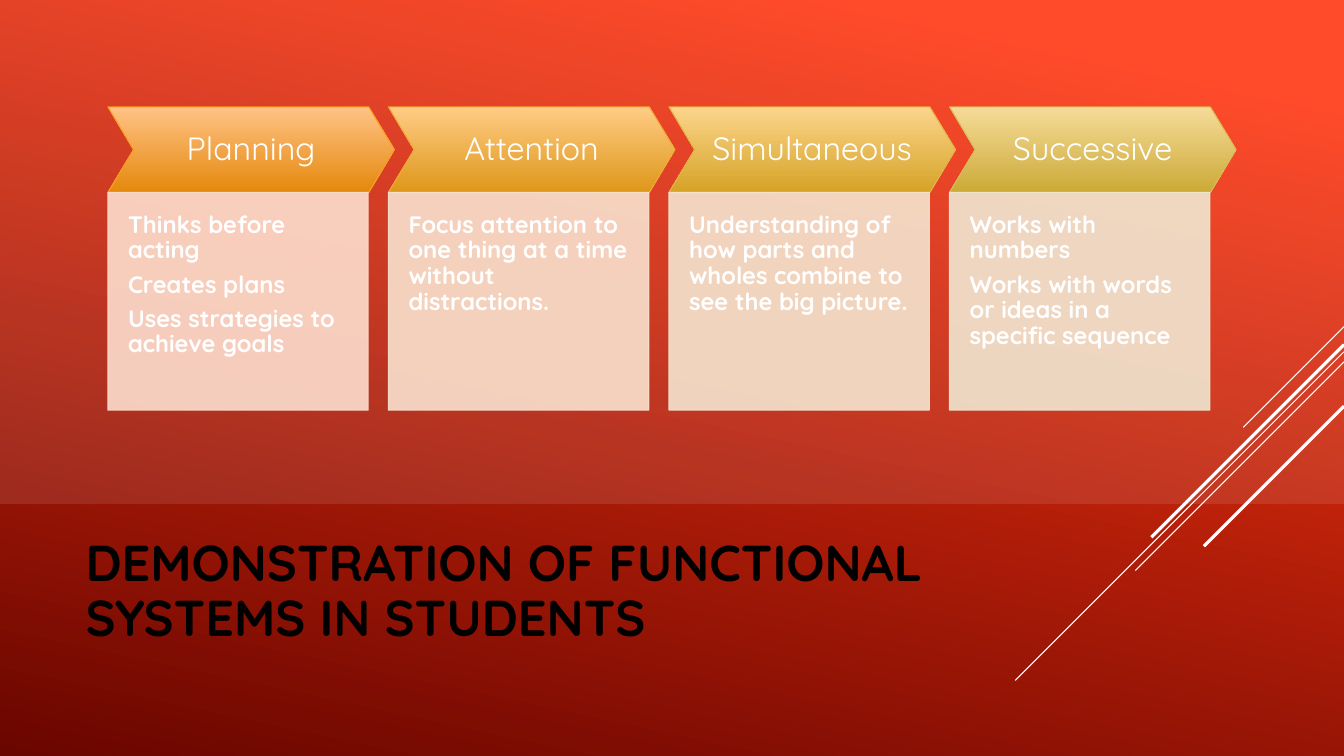
"""Build the slide on functional systems in students."""
from pptx import Presentation
from pptx.dml.color import RGBColor as RGB
from pptx.enum.shapes import MSO_CONNECTOR as CONN, MSO_SHAPE as SHAPE
from pptx.enum.text import MSO_ANCHOR as ANCHOR, PP_ALIGN as ALIGN
from pptx.oxml.ns import qn
from pptx.util import Inches, Pt
from lxml.etree import SubElement

SLIDE_W, SLIDE_H = 13.33, 7.5
FONT = "Quicksand"
WHITE, BLACK = RGB(255, 255, 255), RGB(0, 0, 0)
BG_TOP, BG_BOTTOM = RGB(0xFF, 0x37, 0x12), RGB(0x6A, 0x06, 0x00)

SYSTEMS = [
    ("Planning",
     ["Thinks before acting", "Creates plans", "Uses strategies to achieve goals"],
     RGB(0xFF, 0xC3, 0x86), RGB(0xE5, 0x88, 0x0C),
     RGB(0xFA, 0x9C, 0x1F), RGB(0xFD, 0xDE, 0xCD)),
    ("Attention",
     ["Focus attention to one thing at a time without distractions."],
     RGB(0xFF, 0xCC, 0x85), RGB(0xDE, 0x97, 0x19),
     RGB(0xEE, 0xAA, 0x32), RGB(0xF9, 0xE2, 0xCE)),
    ("Simultaneous",
     ["Understanding of how parts and wholes combine to see the big picture."],
     RGB(0xFC, 0xD5, 0x8C), RGB(0xD6, 0xA3, 0x26),
     RGB(0xE3, 0xB4, 0x44), RGB(0xF5, 0xE5, 0xCF)),
    ("Successive",
     ["Works with numbers", "Works with words or ideas in a specific sequence"],
     RGB(0xF5, 0xDB, 0x99), RGB(0xCC, 0xAA, 0x37),
     RGB(0xD9, 0xBB, 0x55), RGB(0xF1, 0xE7, 0xD1)),
]
RAYS = [(3.24, 1.0, 0.75), (3.49, 3.26, 0.75), (3.59, 2.07, 0.75),
        (3.42, 1.91, 2.25), (4.03, 1.39, 2.25)]


def set_attrs(obj, **values):
    """Set each given value as an attribute of obj."""
    for name, value in values.items():
        setattr(obj, name, value)


def set_gradient(fill, stops, angle):
    """Fill with two (position, colour) stops at a clockwise angle."""
    fill.gradient()
    fill.gradient_angle = 360 - angle
    for stop, (position, color) in zip(fill.gradient_stops, stops):
        stop.position = position
        stop.color.rgb = color


def set_solid(sp, fill, color, opacity):
    """Give a fill of sp a colour with an opacity in percent."""
    fill.solid()
    fill.fore_color.rgb = color
    clr = list(sp._element.spPr.iter(qn("a:srgbClr")))[-1]
    SubElement(clr, qn("a:alpha")).set("val", str(opacity * 1000))


def add_shape(slide, kind, box, adjustments=()):
    """Add a preset shape without shadow."""
    sp = slide.shapes.add_shape(kind, *map(Inches, box))
    sp.shadow.inherit = False
    for i, value in enumerate(adjustments):
        sp.adjustments[i] = value
    return sp


def write(sp, texts, margins, font, align=ALIGN.LEFT, anchor=ANCHOR.TOP, after=0):
    """Write paragraphs with one format into a shape."""
    tf = sp.text_frame
    sides = ("margin_left", "margin_top", "margin_right", "margin_bottom")
    set_attrs(tf, word_wrap=True, vertical_anchor=anchor,
              **dict(zip(sides, map(Inches, margins))))
    for i, text in enumerate(texts):
        p = tf.paragraphs[0] if i == 0 else tf.add_paragraph()
        set_attrs(p, alignment=align, line_spacing=0.9, space_after=Pt(after))
        r = p.add_run()
        r.text = text
        set_attrs(r.font, name=FONT, size=Pt(font["size"]), bold=font["bold"])
        r.font.color.rgb = font["color"]


def add_rays(slide, right):
    """Draw the diagonal lines that run down from the right edge."""
    for top, length, width in RAYS:
        ends = (right, top, right - length, top + length)
        line = slide.shapes.add_connector(CONN.STRAIGHT, *map(Inches, ends))
        line.line.color.rgb = WHITE
        line.line.width = Pt(width)
        SubElement(line._element.spPr, qn("a:effectLst"))


def add_title(slide, box):
    """Add the slide title."""
    sp = slide.shapes.add_textbox(*map(Inches, box))
    write(sp, ["DEMONSTRATION OF FUNCTIONAL SYSTEMS IN STUDENTS"],
          (0.1, 0.05, 0.1, 0.05), dict(size=36, bold=True, color=BLACK),
          anchor=ANCHOR.MIDDLE)


def add_panel(slide, box):
    """Add the pale panel behind the systems."""
    sp = add_shape(slide, SHAPE.SNIP_2_DIAG_RECTANGLE, box, (0, 0))
    set_solid(sp, sp.fill, WHITE, 10)
    sp.line.fill.background()


def add_system(slide, box, system):
    """Add one system: a chevron heading above its description."""
    name, points, light, dark, edge, pale = system
    left, top, width, height = box
    head_h, tip = 0.85, 0.26

    head = add_shape(slide, SHAPE.CHEVRON, (left, top, width + tip, head_h), (0.3,))
    set_gradient(head.fill, [(0, light), (1, dark)], 90)
    head.line.color.rgb = edge
    head.line.width = Pt(0.75)
    write(head, [name], (0.11,) * 4, dict(size=23, bold=False, color=WHITE),
          ALIGN.CENTER, ANCHOR.MIDDLE)

    body = add_shape(slide, SHAPE.RECTANGLE,
                     (left, top + head_h, width, height - head_h))
    set_solid(body, body.fill, pale, 90)
    set_solid(body, body.line.fill, pale, 90)
    body.line.width = Pt(0.75)
    write(body, points, (0.2, 0.2, 0.2, 0.41),
          dict(size=17, bold=True, color=WHITE), after=6)


def add_systems(slide, box):
    """Place the systems in equal columns across the box."""
    left, top, width, height = box
    gap = 0.2
    col_w = (width - gap * (len(SYSTEMS) - 1)) / len(SYSTEMS)
    for i, system in enumerate(SYSTEMS):
        add_system(slide, (left + i * (col_w + gap), top, col_w, height), system)


def main():
    """Build and save the presentation."""
    prs = Presentation()
    set_attrs(prs, slide_width=Inches(SLIDE_W), slide_height=Inches(SLIDE_H))
    slide = prs.slides.add_slide(prs.slide_layouts[6])
    set_gradient(slide.background.fill, [(0.1, BG_TOP), (1, BG_BOTTOM)], 102)
    add_rays(slide, SLIDE_W)
    add_title(slide, (0.75, 5.25, 10.14, 1.26))
    add_panel(slide, (0, 0, SLIDE_W, 5))
    add_systems(slide, (1.07, 1.06, 10.93, 3.01))
    prs.save("out.pptx")


if __name__ == "__main__":
    main()
